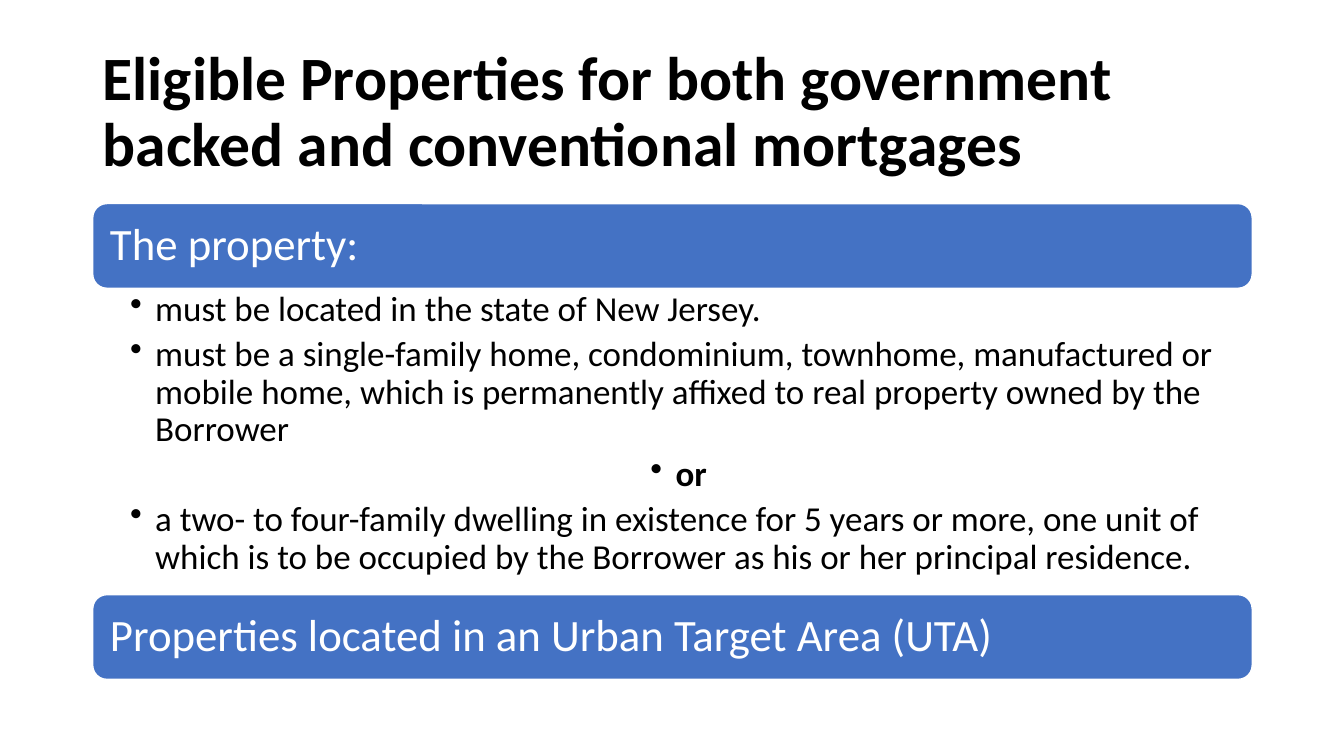
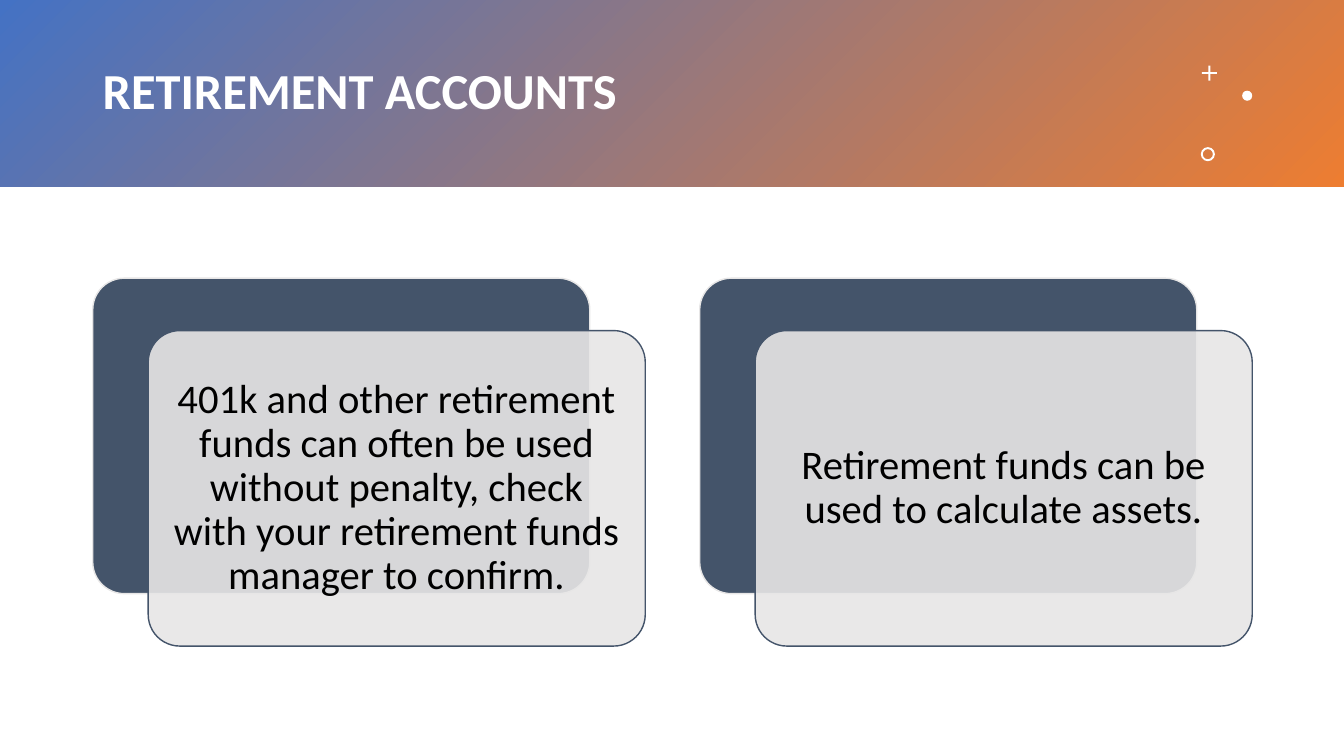
import pptx
import pptx.dml.color
import pptx.enum.shapes
import pptx.enum.text
import pptx.oxml.ns
import pptx.util
from lxml import etree

Inches = pptx.util.Inches
Pt = pptx.util.Pt
SHAPES = pptx.enum.shapes.MSO_SHAPE
ALIGN = pptx.enum.text.PP_ALIGN
ANCHOR = pptx.enum.text.MSO_ANCHOR
qn = pptx.oxml.ns.qn

FONT = "Calibri"
BLACK, WHITE = "000000", "FFFFFF"
BLUE, ORANGE = "4472C4", "ED7D31"
SLATE, LIGHT_GRAY = "44546A", "E7E6E6"
LEFT, CONTENT_WIDTH = 0.92, 11.5


def color(hex_string):
    return pptx.dml.color.RGBColor.from_string(hex_string)


def set_attributes(target, values):
    for name, value in values.items():
        setattr(target, name, value)


class Deck:
    """Holds the shared style and the slide being built."""

    def __init__(self):
        self.presentation = pptx.Presentation()
        set_attributes(self.presentation, {"slide_width": Inches(13.33), "slide_height": Inches(7.5)})
        self.slide = None

    def add_slide(self):
        self.slide = self.presentation.slides.add_slide(self.presentation.slide_layouts[6])

    def shape(self, kind, box, fill=None, line=None, adjust=None, alpha=None):
        """Add a preset shape; alpha is the opacity of its fill in percent."""
        shape = self.slide.shapes.add_shape(kind, *map(Inches, box))
        shape.shadow.inherit = False
        if adjust is not None:
            shape.adjustments[0] = adjust
        if fill:
            shape.fill.solid()
            shape.fill.fore_color.rgb = color(fill)
        if alpha is not None:
            fill_color = shape.element.spPr.find(qn("a:solidFill"))[0]
            etree.SubElement(fill_color, qn("a:alpha"), val=str(alpha * 1000))
        if line:
            shape.line.color.rgb = color(line)
            shape.line.width = Pt(1)
        else:
            shape.line.fill.background()
        return shape

    def frame(self, shape, insets, anchor=ANCHOR.MIDDLE):
        """Prepare the text frame; insets run left, top, right, bottom."""
        left, top, right, bottom = map(Inches, insets)
        set_attributes(shape.text_frame, {
            "word_wrap": True, "vertical_anchor": anchor,
            "margin_left": left, "margin_top": top,
            "margin_right": right, "margin_bottom": bottom})
        return shape.text_frame

    def add_text(self, paragraph, text, size, text_color=BLACK, bold=False,
                 align=ALIGN.LEFT, space_after=0):
        set_attributes(paragraph, {
            "alignment": align, "line_spacing": 0.9, "space_after": Pt(space_after)})
        run = paragraph.add_run()
        run.text = text
        set_attributes(run.font, {"name": FONT, "size": Pt(size), "bold": bold})
        run.font.color.rgb = color(text_color)

    def text_box(self, box, insets, anchor=ANCHOR.MIDDLE):
        return self.frame(self.slide.shapes.add_textbox(*map(Inches, box)), insets, anchor)

    def title(self, text, box, size, text_color):
        text_frame = self.text_box(box, (0.1, 0.05, 0.1, 0.05))
        self.add_text(text_frame.paragraphs[0], text, size, text_color, bold=True)

    def heading_bar(self, text, top):
        bar = self.shape(SHAPES.ROUNDED_RECTANGLE, (LEFT, top, CONTENT_WIDTH, 0.84), BLUE, WHITE)
        text_frame = self.frame(bar, [0.13] * 4)
        self.add_text(text_frame.paragraphs[0], text, 32, WHITE)

    def bullets(self, items, box):
        """Add a bulleted list of (text, format values) items."""
        text_frame = self.text_box(box, (0.37, 0.04, 0.25, 0.04), ANCHOR.TOP)
        for index, (text, values) in enumerate(items):
            paragraph = text_frame.add_paragraph() if index else text_frame.paragraphs[0]
            self.add_text(paragraph, text, 25, space_after=5, **values)
            properties = paragraph._p.get_or_add_pPr()
            properties.set("marL", str(Inches(0.25)))
            properties.set("indent", str(Inches(-0.25)))
            etree.SubElement(properties, qn("a:buChar"), char="•")

    def gradient_band(self, height):
        band = self.shape(SHAPES.RECTANGLE, (0, 0, 13.33, height))
        band.fill.gradient()
        band.fill.gradient_angle = 315
        for stop, stop_color in zip(band.fill.gradient_stops, (BLUE, ORANGE)):
            stop.color.rgb = color(stop_color)

    def layered_card(self, text, left):
        """Add a dark card with a translucent text card offset over it."""
        top, width, height = 2.76, 4.93, 3.13
        self.shape(SHAPES.ROUNDED_RECTANGLE, (left, top, width, height),
                   SLATE, LIGHT_GRAY, adjust=0.1)
        front = self.shape(SHAPES.ROUNDED_RECTANGLE, (left + 0.55, top + 0.52, width, height),
                           LIGHT_GRAY, SLATE, adjust=0.1, alpha=90)
        text_frame = self.frame(front, [0.12] * 4)
        self.add_text(text_frame.paragraphs[0], text, 29, align=ALIGN.CENTER)


def build_properties(deck):
    deck.add_slide()
    deck.title("Eligible Properties for both government backed and conventional mortgages",
               (LEFT, 0.4, CONTENT_WIDTH, 1.45), 44, BLACK)
    deck.heading_bar("The property:", 2.02)
    deck.bullets([
        ("must be located in the state of New Jersey.", {}),
        ("must be a single-family home, condominium, townhome, manufactured or mobile home, "
         "which is permanently affixed to real property owned by the Borrower", {}),
        ("or", {"bold": True, "align": ALIGN.CENTER}),
        ("a two- to four-family dwelling in existence for 5 years or more, one unit of which "
         "is to be occupied by the Borrower as his or her principal residence.", {}),
    ], (LEFT, 2.85, CONTENT_WIDTH, 3.04))
    deck.heading_bar("Properties located in an Urban Target Area (UTA)", 5.9)


def build_retirement(deck):
    deck.add_slide()
    deck.gradient_band(1.85)
    deck.title("RETIREMENT ACCOUNTS", (LEFT, 0.33, 10.75, 1.19), 36, WHITE)
    for kind, left, top, size, adjust in (
            (SHAPES.CROSS, 11.92, 0.65, 0.15, 0.44),
            (SHAPES.OVAL, 12.32, 0.9, 0.1, None),
            (SHAPES.DONUT, 11.91, 1.46, 0.14, 0.14)):
        deck.shape(kind, (left, top, size, size), WHITE, adjust=adjust)
    cards = (
        "401k and other retirement funds can often be used without penalty, "
        "check with your retirement funds manager to confirm.",
        "Retirement funds can be used to calculate assets.",
    )
    for index, text in enumerate(cards):
        deck.layered_card(text, LEFT + index * 6.02)


def main():
    deck = Deck()
    build_properties(deck)
    build_retirement(deck)
    deck.presentation.save("out.pptx")


if __name__ == "__main__":
    main()
